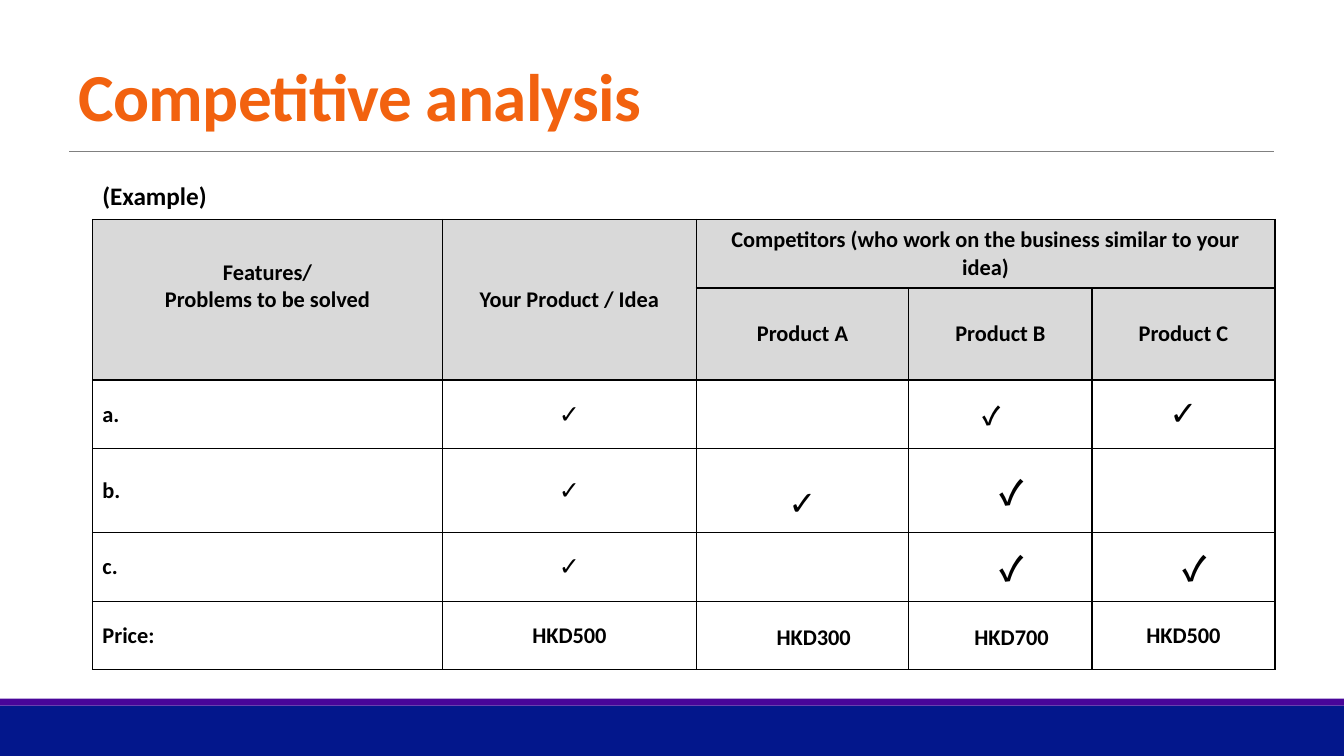
from pptx import Presentation
from pptx.dml.color import RGBColor as Rgb
from pptx.enum.shapes import MSO_CONNECTOR as Conn, MSO_SHAPE as Shape
from pptx.enum.text import MSO_ANCHOR as Anchor, PP_ALIGN as Align
from pptx.oxml.ns import qn
from pptx.util import Pt
from lxml.etree import SubElement as Sub

HUES = {
    "bar": "03178C",
    "strip": "480599",
    "rule": "808080",
    "title": "F2620F",
    "ink": "000000",
    "head": "D9D9D9",
}
WIDE, HIGH = 960, 540
TICK = "✓"
GAP = ("　", 16)
BIG = (TICK, 24)


def hue(name):
    return Rgb.from_string(HUES[name])


def write(frame, lines, size=16, color="ink", align=Align.LEFT, face="Calibri", track=0, lead=None):
    for num, line in enumerate(lines):
        para = frame.add_paragraph() if num else frame.paragraphs[0]
        para.alignment = align
        if lead:
            para.line_spacing = lead
        for part in [line] if isinstance(line, str) else line:
            text, points = (part, size) if isinstance(part, str) else part
            run = para.add_run()
            run.text = text
            font = run.font
            font.name, font.size, font.bold = face, Pt(points), True
            font.color.rgb = hue(color)
            if track:
                run._r.get_or_add_rPr().set("spc", str(track))


class Deck:
    def __init__(self):
        self.file = Presentation()
        self.file.slide_width, self.file.slide_height = Pt(WIDE), Pt(HIGH)
        self.slide = self.file.slides.add_slide(self.file.slide_layouts[5])
        self.shapes = self.slide.shapes

    def bar(self, left, top, width, height, color):
        box = self.shapes.add_shape(Shape.RECTANGLE, Pt(left), Pt(top), Pt(width), Pt(height))
        box.shadow.inherit = False
        box.fill.solid()
        box.fill.fore_color.rgb = hue(color)
        box.line.fill.background()

    def rule(self, left, right, top):
        line = self.shapes.add_connector(Conn.STRAIGHT, Pt(left), Pt(top), Pt(right), Pt(top))
        line.line.color.rgb = hue("rule")
        line.line.width = Pt(0.5)
        Sub(line._element.spPr, qn("a:effectLst"))

    def title(self, text, left, top, width, height):
        box = self.shapes.title
        box.left, box.top, box.width, box.height = Pt(left), Pt(top), Pt(width), Pt(height)
        box.text_frame.vertical_anchor = Anchor.BOTTOM
        write(box.text_frame, [text], size=48, color="title", track=-50, lead=0.85)

    def label(self, text, left, top, width, height):
        box = self.shapes.add_textbox(Pt(left), Pt(top), Pt(width), Pt(height))
        box.text_frame.word_wrap = False
        write(box.text_frame, [text], size=18)

    def table(self, left, top, cols, rows):
        frame = self.shapes.add_table(
            len(rows), len(cols), Pt(left), Pt(top), Pt(sum(cols)), Pt(sum(rows)))
        grid = frame.table
        for col, width in zip(grid.columns, cols):
            col.width = Pt(width)
        for row, height in zip(grid.rows, rows):
            row.height = Pt(height)
        return grid

    def border(self, cell):
        props = cell._tc.get_or_add_tcPr()
        for side in "LRTB":
            edge = Sub(props, qn(f"a:ln{side}"), w=str(Pt(1)))
            fill = Sub(edge, qn("a:solidFill"))
            Sub(fill, qn("a:srgbClr"), val=HUES["ink"])

    def cell(self, cell, lines, fill=None, align=Align.CENTER):
        self.border(cell)
        if fill:
            cell.fill.solid()
            cell.fill.fore_color.rgb = hue(fill)
        else:
            cell.fill.background()
        cell.vertical_anchor = Anchor.MIDDLE
        write(cell.text_frame, lines, align=align)


HEAD = [
    [["Features/", "Problems to be solved"], ["Your Product / Idea"],
     ["Competitors (who work on the business similar to your idea)"], [], []],
    [[], [], ["Product A"], ["Product B"], ["Product C"]],
]
OURS = [[(TICK, 18)]]
SHIFT = [[GAP, BIG]]
BODY = [
    [["a."], OURS, [], [[(TICK + "　", 18)]], [[BIG]]],
    [["b."], OURS, [[BIG]], SHIFT, []],
    [["c."], OURS, [], SHIFT, SHIFT],
    [["Price:"], ["HKD500"], ["　HKD300"], ["　HKD700"], ["HKD500"]],
]


def main():
    deck = Deck()
    deck.bar(0, 504, WIDE, 36, "bar")
    deck.bar(0, 499, WIDE, 5, "strip")
    deck.rule(49.5, 910, 108)
    deck.title("Competitive analysis", 49, 22.5, 862, 77.5)
    grid = deck.table(66, 156.75, [250.25, 181, 152, 130.75, 130.75], [49, 65.75, 49, 60, 49, 49])
    for y, row in enumerate(HEAD + BODY):
        for x, lines in enumerate(row):
            head = y < len(HEAD)
            align = Align.CENTER if head or x else Align.LEFT
            deck.cell(grid.cell(y, x), lines, "head" if head else None, align)
    for x in range(2):
        grid.cell(0, x).merge(grid.cell(1, x))
    grid.cell(0, 2).merge(grid.cell(0, 4))
    grid.cell(0, 0).margin_bottom = Pt(23)
    grid.cell(3, 2).margin_top = Pt(23)
    grid.cell(2, 3).margin_left = Pt(13)
    deck.label("(Example)", 66, 125.5, 93.5, 29)
    deck.file.save("out.pptx")


if __name__ == "__main__":
    main()
